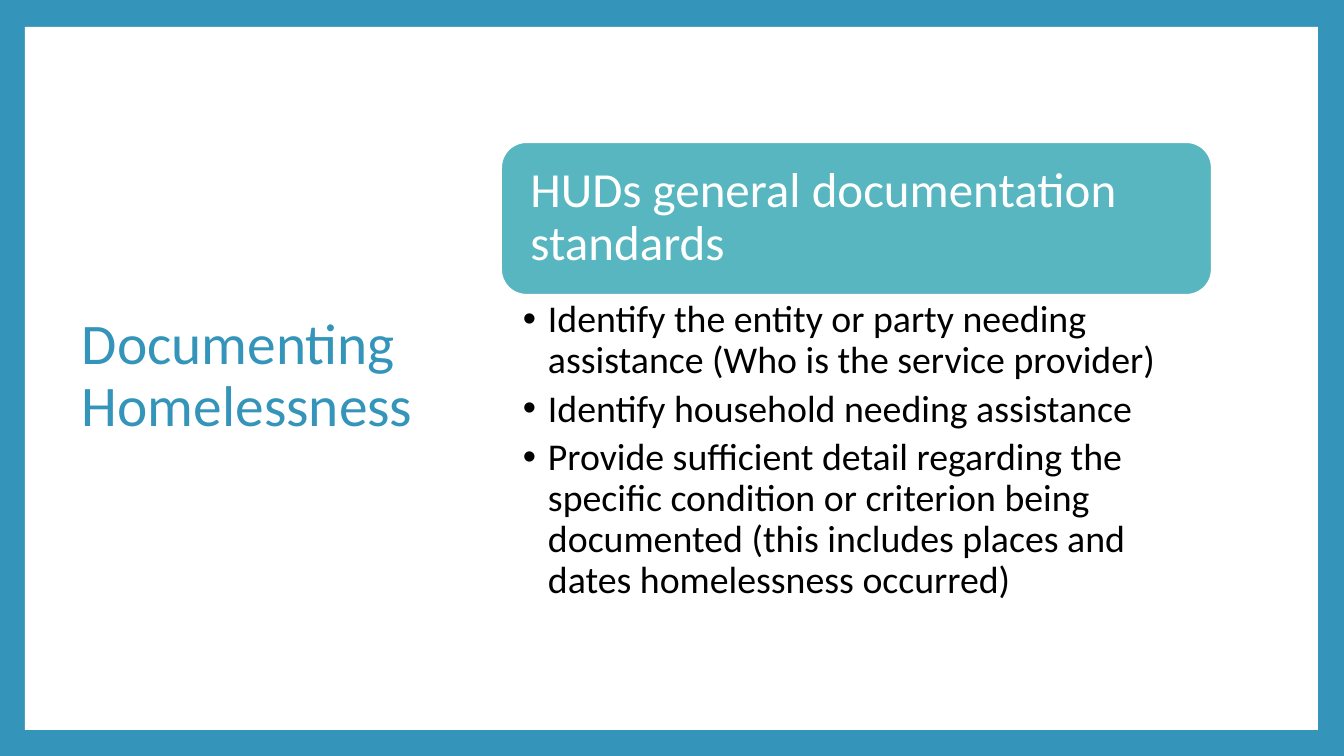
import pptx
import pptx.dml.color
import pptx.enum.shapes
import pptx.enum.text
import pptx.oxml.ns
import pptx.util
from lxml import etree

COLORS = {"blue": "3494BA", "teal": "58B6C0", "white": "FFFFFF", "black": "000000"}
FONT = "Calibri"
EMU_PER_PX = 914400 / 100.8


def px(length):
    return pptx.util.Emu(round(length * EMU_PER_PX))


def color(name):
    return pptx.dml.color.RGBColor.from_string(COLORS[name])


def write_paragraph(paragraph, text, size, fill, after=0, level=0):
    paragraph.level = level
    paragraph.alignment = pptx.enum.text.PP_ALIGN.LEFT
    paragraph.line_spacing = 0.9
    paragraph.space_before = pptx.util.Pt(0)
    paragraph.space_after = pptx.util.Pt(after)
    run = paragraph.add_run()
    run.text = text
    run.font.name = FONT
    run.font.size = pptx.util.Pt(size)
    run.font.color.rgb = color(fill)


class SlideBuilder:
    def __init__(self, presentation):
        self.slide = presentation.slides.add_slide(presentation.slide_layouts[1])
        self.shapes = self.slide.shapes

    def background(self, fill):
        self.slide.background.fill.solid()
        self.slide.background.fill.fore_color.rgb = color(fill)

    def place(self, shape, box):
        shape.left, shape.top, shape.width, shape.height = map(px, box)

    def frame(self, shape, margins, anchor):
        frame = shape.text_frame
        frame.word_wrap = True
        frame.auto_size = pptx.enum.text.MSO_AUTO_SIZE.NONE
        frame.vertical_anchor = anchor
        (frame.margin_left, frame.margin_top,
         frame.margin_right, frame.margin_bottom) = map(px, margins)
        return frame

    def shape(self, kind, box, fill, line=None):
        shape = self.shapes.add_shape(kind, *map(px, box))
        shape.shadow.inherit = False
        shape.fill.solid()
        shape.fill.fore_color.rgb = color(fill)
        if line:
            shape.line.color.rgb = color(line)
            shape.line.width = pptx.util.Pt(1.5)
        else:
            shape.line.fill.background()
        return shape

    def panel(self, box, fill):
        panel = self.shape(pptx.enum.shapes.MSO_SHAPE.RECTANGLE, box, fill)
        panel.element.getparent().insert(2, panel.element)

    def title(self, text, box):
        title = self.shapes.title
        self.place(title, box)
        frame = self.frame(title, (10, 5, 10, 5), pptx.enum.text.MSO_ANCHOR.MIDDLE)
        write_paragraph(frame.paragraphs[0], text, size=41, fill="blue")

    def banner(self, text, box):
        kind = pptx.enum.shapes.MSO_SHAPE.ROUNDED_RECTANGLE
        banner = self.shape(kind, box, "teal", line="white")
        frame = self.frame(banner, (22, 22, 22, 22), pptx.enum.text.MSO_ANCHOR.MIDDLE)
        write_paragraph(frame.paragraphs[0], text, size=35, fill="white")

    def bullets(self, items, box):
        body = self.slide.placeholders[1]
        self.place(body, box)
        frame = self.frame(body, (22, 5, 27, 5), pptx.enum.text.MSO_ANCHOR.TOP)
        for index, item in enumerate(items):
            paragraph = frame.add_paragraph() if index else frame.paragraphs[0]
            write_paragraph(paragraph, item, size=27, fill="black", after=5.4, level=1)
            properties = paragraph._p.get_or_add_pPr()
            properties.set("marL", str(px(25)))
            properties.set("indent", str(px(-25)))
            font = etree.SubElement(properties, pptx.oxml.ns.qn("a:buFont"))
            font.set("typeface", "Arial")
            bullet = etree.SubElement(properties, pptx.oxml.ns.qn("a:buChar"))
            bullet.set("char", "•")


def main():
    presentation = pptx.Presentation()
    presentation.slide_width = px(1344)
    presentation.slide_height = px(756)
    builder = SlideBuilder(presentation)
    builder.background("blue")
    builder.panel((25, 27, 1293, 703), "white")
    builder.title("Documenting Homelessness", (72, 68, 371, 618))
    builder.banner("HUDs general documentation standards", (501, 142, 711, 153))
    builder.bullets([
        "Identify the entity or party needing assistance (Who is the service provider)",
        "Identify household needing assistance",
        "Provide sufficient detail regarding the specific condition or criterion "
        "being documented (this includes places and dates homelessness occurred)",
    ], (501, 295, 711, 320))
    presentation.save("out.pptx")


if __name__ == "__main__":
    main()
